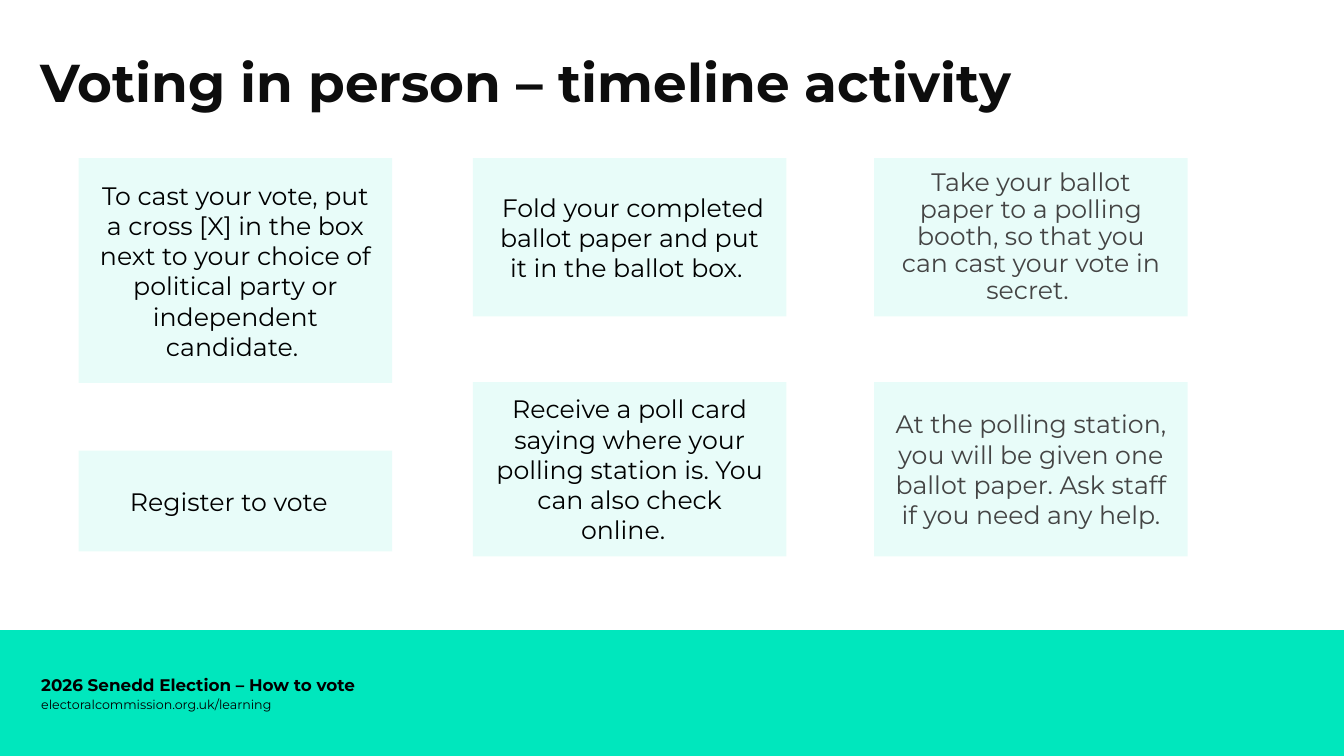
"""Build the voting in person timeline activity slide."""
import pptx
import pptx.util
import pptx.dml.color
import pptx.enum.shapes
import pptx.enum.text
import pptx.oxml
import pptx.oxml.ns
from lxml import etree

TITLE = "Voting in person – timeline activity"
ELECTION = "2026 Senedd Election – How to vote"
WEBSITE = "electoralcommission.org.uk/learning"
COLORS = {"mint": "00E7BD", "title": "0D0D0D", "black": "000000", "grey": "444444"}
FONT = "Montserrat"
WIDTH, HEIGHT = 13.33, 7.5
COLUMNS = (0.78, 4.69, 8.67)
ROWS = (1.57, 3.79, 4.47)
CARD_WIDTH = 3.11
CARD_INSET = 0.2
MINT_OPACITY = 9

# Each step: text, column, row, height, colour, line spacing
REGISTER = ("Register to vote  ", 0, 2, 1.0, "black", 1.0)
STEPS = [
    ("Receive a poll card saying where your polling station is. You can also check online.  ",
     1, 1, 1.73, "black", 1.0),
    (" Fold your completed ballot paper and put it in the ballot box. ",
     1, 0, 1.57, "black", 1.0),
    ("At the polling station, you will be given one ballot paper. Ask staff if you need any help.",
     2, 1, 1.73, "grey", 1.0),
    ("To cast your vote, put a cross [X] in the box next to your choice of political party "
     "or independent candidate. ", 0, 0, 2.23, "black", 1.0),
    ("Take your ballot paper to a polling booth, so that you can cast your vote in secret. ",
     2, 0, 1.57, "grey", 0.9),
]


def rgb(name):
    return pptx.dml.color.RGBColor.from_string(COLORS[name])


def place(part, left, top, width, height):
    part.left, part.top, part.width, part.height = map(
        pptx.util.Inches, (left, top, width, height))


def write(part, text, size, color, bold=False, centred=False, spacing=1.0):
    frame = part.text_frame
    frame.word_wrap = True
    frame.auto_size = pptx.enum.text.MSO_AUTO_SIZE.NONE
    frame.vertical_anchor = pptx.enum.text.MSO_ANCHOR.MIDDLE
    line = frame.paragraphs[0]
    align = pptx.enum.text.PP_ALIGN
    line.alignment = align.CENTER if centred else align.LEFT
    line.line_spacing = spacing
    line.space_before = pptx.util.Pt(0)
    run = line.add_run()
    run.text = text
    run.font.name = FONT
    run.font.size = pptx.util.Pt(size)
    run.font.bold = bold
    run.font.color.rgb = rgb(color)


def fill_card(card, step):
    text, column, row, height, color, spacing = step
    place(card, COLUMNS[column], ROWS[row], CARD_WIDTH, height)
    card.fill.solid()
    card.fill.fore_color.rgb = rgb("mint")
    mint = card.fill._xPr.find(".//" + pptx.oxml.ns.qn("a:srgbClr"))
    etree.SubElement(mint, pptx.oxml.ns.qn("a:alpha"), val=str(MINT_OPACITY * 1000))
    card.line.fill.background()
    frame = card.text_frame
    frame.margin_left = frame.margin_right = pptx.util.Inches(CARD_INSET)
    frame.margin_top = frame.margin_bottom = pptx.util.Inches(CARD_INSET)
    write(card, text, 18, color, centred=True, spacing=spacing)


def main():
    deck = pptx.Presentation()
    deck.slide_width = pptx.util.Inches(WIDTH)
    deck.slide_height = pptx.util.Inches(HEIGHT)
    slide = deck.slides.add_slide(deck.slide_layouts[1])
    shapes = slide.shapes
    rectangle = pptx.enum.shapes.MSO_SHAPE.RECTANGLE

    title = shapes.title
    place(title, 0.3, 0.51, 11.27, 0.67)
    write(title, TITLE, 38, "title", bold=True, spacing=0.9)

    register = slide.placeholders[1]
    fill_card(register, REGISTER)
    bullet = register.text_frame.paragraphs[0]._p.get_or_add_pPr()
    bullet.set("marL", "0")
    bullet.set("indent", "0")
    etree.SubElement(bullet, pptx.oxml.ns.qn("a:buNone"))

    band = shapes.add_shape(rectangle, 0, 0, 0, 0)
    place(band, 0, HEIGHT * 5 / 6, WIDTH, HEIGHT / 6)
    band.shadow.inherit = False
    band.fill.solid()
    band.fill.fore_color.rgb = rgb("mint")
    band.line.fill.background()

    for text, top, size, bold in ((WEBSITE, 6.79, 9, False), (ELECTION, 6.59, 12, True)):
        footer = shapes.add_textbox(0, 0, 0, 0)
        place(footer, 0.31, top, 7.65, 0.4)
        write(footer, text, size, "black", bold=bold)

    for step in STEPS:
        card = shapes.add_shape(rectangle, 0, 0, 0, 0)
        card.shadow.inherit = False
        fill_card(card, step)

    deck.save("out.pptx")


if __name__ == "__main__":
    main()
